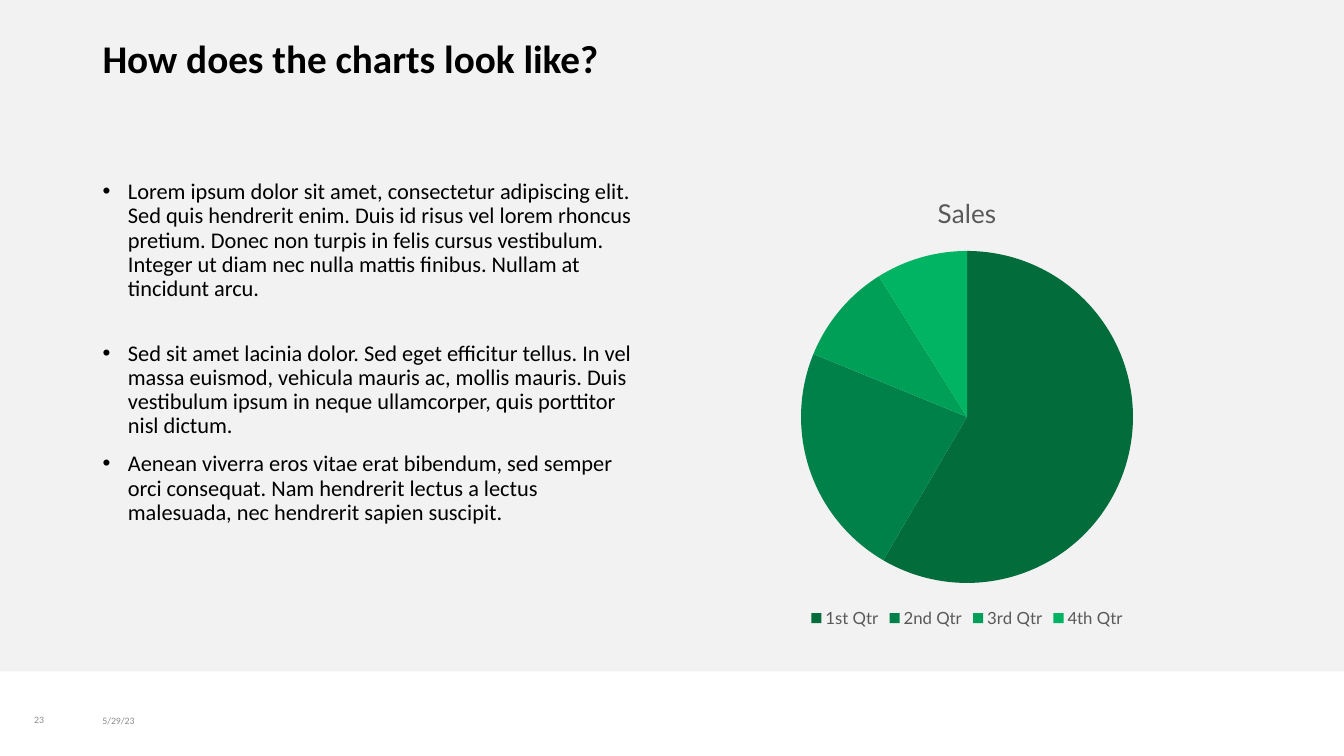
from lxml.etree import SubElement
from pptx import Presentation
from pptx.chart.data import CategoryChartData
from pptx.dml.color import RGBColor
from pptx.enum.chart import XL_CHART_TYPE, XL_LEGEND_POSITION
from pptx.enum.shapes import MSO_SHAPE
from pptx.enum.text import MSO_ANCHOR, MSO_AUTO_SIZE, PP_ALIGN
from pptx.oxml.ns import qn
from pptx.util import Cm, Pt

HEADING = "How does the charts look like?"
POINTS = [
    ("Lorem ipsum dolor sit amet, consectetur adipiscing elit. Sed quis hendrerit enim. "
     "Duis id risus vel lorem rhoncus pretium. Donec non turpis in felis cursus vestibulum. "
     "Integer ut diam nec nulla mattis finibus. Nullam at tincidunt arcu.", 0),
    ("Sed sit amet lacinia dolor. Sed eget efficitur tellus. In vel massa euismod, vehicula "
     "mauris ac, mollis mauris. Duis vestibulum ipsum in neque ullamcorper, quis porttitor "
     "nisl dictum.", 29),
    ("Aenean viverra eros vitae erat bibendum, sed semper orci consequat. Nam hendrerit "
     "lectus a lectus malesuada, nec hendrerit sapien suscipit.", 10),
]
SALES = [
    ("1st Qtr", 59, "026C3B"),
    ("2nd Qtr", 23, "00814A"),
    ("3rd Qtr", 10, "009F57"),
    ("4th Qtr", 9, "00B463"),
]
FOOTERS = [("5/29/23", 2.33, 17.65, 7.62), ("23", 0.61, 17.63, 1.37)]

SLIDE_WIDTH, SLIDE_HEIGHT = Cm(33.87), Cm(19.05)
MARGIN, CONTENT_TOP = Cm(2.33), Cm(4.42)
COLUMN_WIDTH, COLUMN_HEIGHT = Cm(14.2), Cm(11.51)
CHART_LEFT = SLIDE_WIDTH - Cm(2.4) - COLUMN_WIDTH


def color(value):
    return RGBColor.from_string(value)


def style(font, size, shade, name="Calibri", bold=False):
    font.size, font.name, font.bold = Pt(size), name, bold
    font.color.rgb = color(shade)


def place(shape, left, top, width, height):
    shape.left, shape.top, shape.width, shape.height = left, top, width, height


def set_frame(frame, anchor):
    frame.word_wrap = True
    frame.auto_size = MSO_AUTO_SIZE.NONE
    frame.vertical_anchor = anchor


def add_bullet(paragraph):
    properties = paragraph._p.get_or_add_pPr()
    properties.set("marL", str(Cm(0.64)))
    properties.set("indent", str(-Cm(0.64)))
    SubElement(properties, qn("a:buFont"), typeface="Arial")
    SubElement(properties, qn("a:buChar"), char="•")


def add_backdrop(slide):
    backdrop = slide.shapes.add_shape(MSO_SHAPE.RECTANGLE, 0, 0, SLIDE_WIDTH, Cm(16.92))
    backdrop.shadow.inherit = False
    backdrop.fill.solid()
    backdrop.fill.fore_color.rgb = color("F2F2F2")
    backdrop.line.fill.background()
    slide.shapes._spTree.insert(2, backdrop._element)


def add_heading(slide):
    heading = slide.shapes.title
    place(heading, MARGIN, Cm(0.86), Cm(19.35), Cm(2.95))
    heading.text_frame.text = HEADING
    set_frame(heading.text_frame, MSO_ANCHOR.TOP)
    paragraph = heading.text_frame.paragraphs[0]
    paragraph.alignment = PP_ALIGN.LEFT
    paragraph.line_spacing = 0.9
    style(paragraph.runs[0].font, 28, "000000", bold=True)


def add_points(slide):
    body = slide.placeholders[1]
    place(body, MARGIN, CONTENT_TOP, COLUMN_WIDTH, COLUMN_HEIGHT)
    body.text_frame.text = "\n".join(text for text, _ in POINTS)
    set_frame(body.text_frame, MSO_ANCHOR.TOP)
    for paragraph, (_, gap) in zip(body.text_frame.paragraphs, POINTS):
        add_bullet(paragraph)
        paragraph.line_spacing = 0.9
        paragraph.space_before = Pt(gap)
        style(paragraph.runs[0].font, 16, "000000")


def add_footers(slide):
    for text, left, top, width in FOOTERS:
        footer = slide.shapes.add_textbox(Cm(left), Cm(top), Cm(width), Cm(1.02))
        footer.text_frame.text = text
        set_frame(footer.text_frame, MSO_ANCHOR.MIDDLE)
        style(footer.text_frame.paragraphs[0].runs[0].font, 7, "8C8C8C")


def add_sales_chart(slide):
    quarters, values, shades = zip(*SALES)
    sales = CategoryChartData()
    sales.categories = quarters
    sales.add_series("Sales", values)
    chart = slide.shapes.add_chart(
        XL_CHART_TYPE.PIE, CHART_LEFT, CONTENT_TOP, COLUMN_WIDTH, COLUMN_HEIGHT, sales).chart
    style(chart.font, 10, "000000", "Lato")
    chart.has_title = True
    chart.chart_title.include_in_layout = False
    title = chart.chart_title.text_frame
    title.text = "Sales"
    style(title.paragraphs[0].runs[0].font, 18.6, "595959", "Lato")
    chart.has_legend = True
    chart.legend.position = XL_LEGEND_POSITION.BOTTOM
    chart.legend.include_in_layout = False
    style(chart.legend.font, 12, "595959", "Lato")
    plot = chart.plots[0]
    plot.vary_by_categories = True
    for index, shade in enumerate(shades):
        wedge = plot.series[0].points[index].format
        wedge.fill.solid()
        wedge.fill.fore_color.rgb = color(shade)
        wedge.line.fill.background()


def main():
    deck = Presentation()
    deck.slide_width, deck.slide_height = SLIDE_WIDTH, SLIDE_HEIGHT
    slide = deck.slides.add_slide(deck.slide_layouts[1])
    add_backdrop(slide)
    add_heading(slide)
    add_points(slide)
    add_footers(slide)
    add_sales_chart(slide)
    deck.save("out.pptx")


if __name__ == "__main__":
    main()
